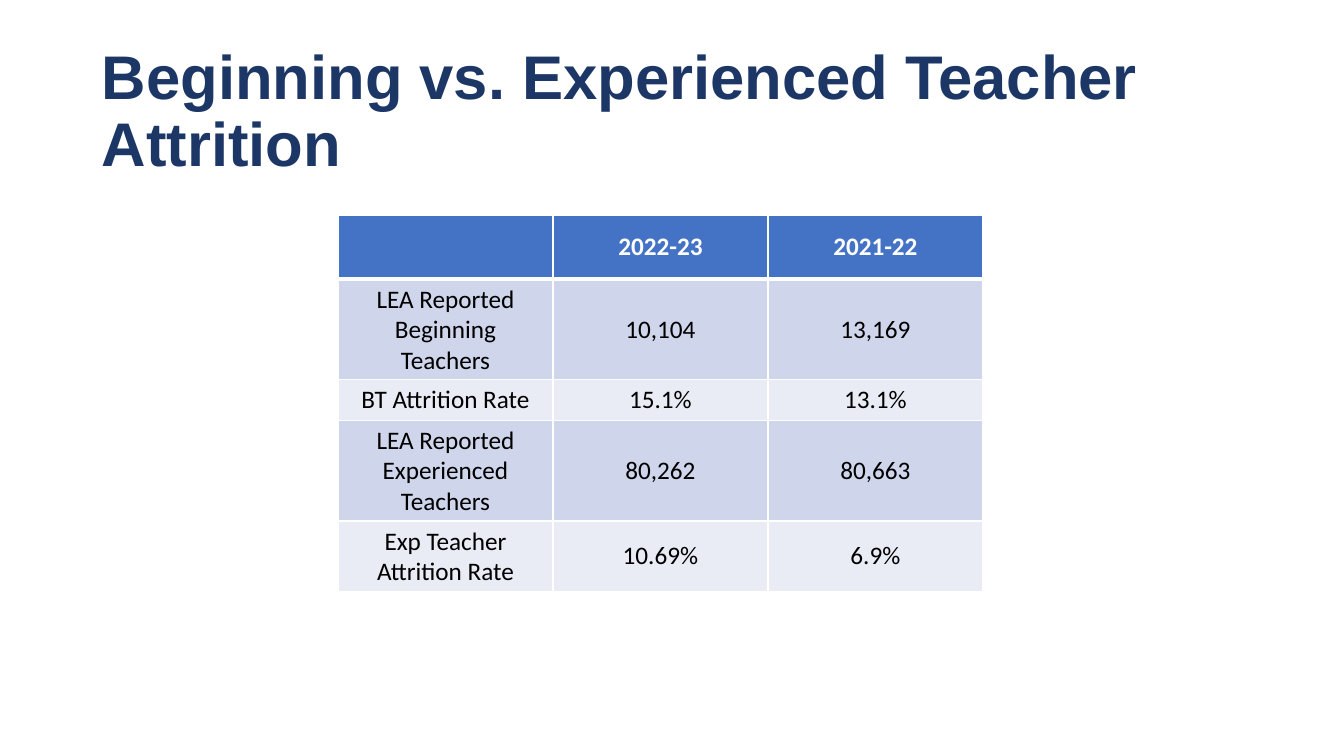
from lxml import etree
from pptx import Presentation
from pptx.dml.color import RGBColor
from pptx.enum.text import MSO_ANCHOR, PP_ALIGN
from pptx.oxml.ns import qn
from pptx.util import Pt


def px(length):
    """Turn pixels, 100.8 to the inch, into EMU."""
    return round(length * 914400 / 100.8)


def color(code):
    return RGBColor.from_string(code)


WHITE = "FFFFFF"
HEADER_BLUE = "4472C4"
BANDS = ["E9EBF5", "CFD5EA"]
ATTRITION = [
    ["", "2022-23", "2021-22"],
    ["LEA Reported Beginning Teachers", "10,104", "13,169"],
    ["BT Attrition Rate", "15.1%", "13.1%"],
    ["LEA Reported Experienced Teachers", "80,262", "80,663"],
    ["Exp Teacher Attrition Rate", "10.69%", "6.9%"],
]
COLUMN_WIDTH = 215
ROW_HEIGHTS = [64, 37, 37, 37, 37]

deck = Presentation()
deck.slide_width, deck.slide_height = px(1344), px(756)
slide = deck.slides.add_slide(deck.slide_layouts[6])

# Title
title = slide.shapes.add_textbox(px(92), px(40), px(1159), px(146)).text_frame
title.word_wrap = True
title.vertical_anchor = MSO_ANCHOR.MIDDLE
title.text = "Beginning vs. Experienced Teacher Attrition"
heading = title.paragraphs[0]
heading.line_spacing = 0.9
heading.font.name = "Arial"
heading.font.size = Pt(44)
heading.font.bold = True
heading.font.color.rgb = color("1C3766")

# Attrition table
table = slide.shapes.add_table(
    len(ATTRITION), len(ATTRITION[0]), px(338), px(215),
    px(COLUMN_WIDTH * len(ATTRITION[0])), px(sum(ROW_HEIGHTS))).table
for column in table.columns:
    column.width = px(COLUMN_WIDTH)

for r, (values, height) in enumerate(zip(ATTRITION, ROW_HEIGHTS)):
    table.rows[r].height = px(height)
    is_header = r == 0
    for c, value in enumerate(values):
        cell = table.cell(r, c)
        cell.vertical_anchor = MSO_ANCHOR.MIDDLE
        cell.text_frame.text = value
        entry = cell.text_frame.paragraphs[0]
        entry.alignment = PP_ALIGN.CENTER
        entry.font.name = "Calibri"
        entry.font.size = Pt(18)
        entry.font.bold = is_header
        entry.font.color.rgb = color(WHITE if is_header else "000000")

        # The rule under the header is thicker than the other borders
        top = 3 if r == 1 else 1
        bottom = 3 if is_header else 1
        properties = cell._tc.get_or_add_tcPr()
        for side, width in [("L", 1), ("R", 1), ("T", top), ("B", bottom)]:
            border = etree.SubElement(properties, qn(f"a:ln{side}"), w=str(Pt(width)))
            line_fill = etree.SubElement(border, qn("a:solidFill"))
            etree.SubElement(line_fill, qn("a:srgbClr"), val=WHITE)
        cell.fill.solid()
        cell.fill.fore_color.rgb = color(HEADER_BLUE if is_header else BANDS[r % 2])

deck.save("out.pptx")
